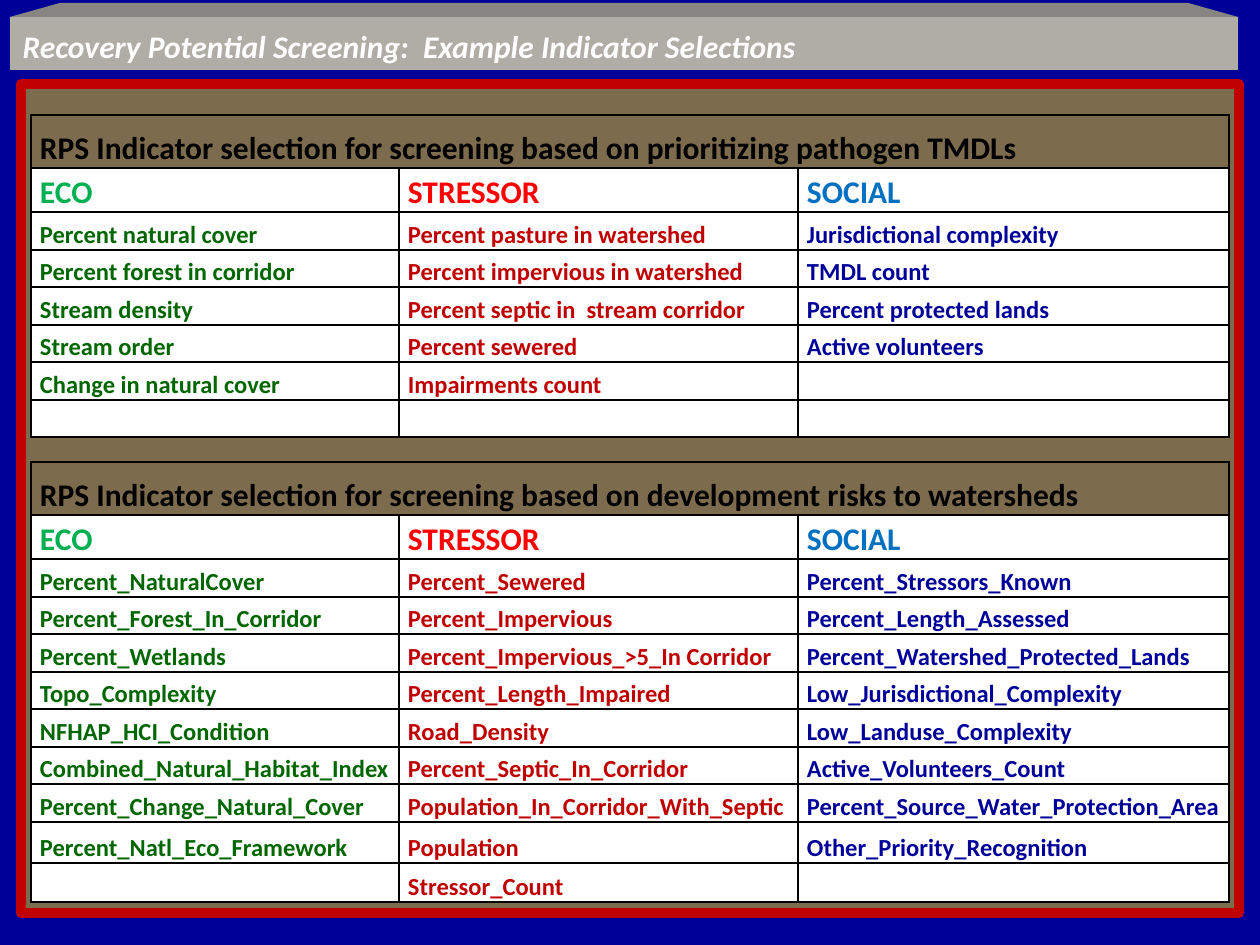
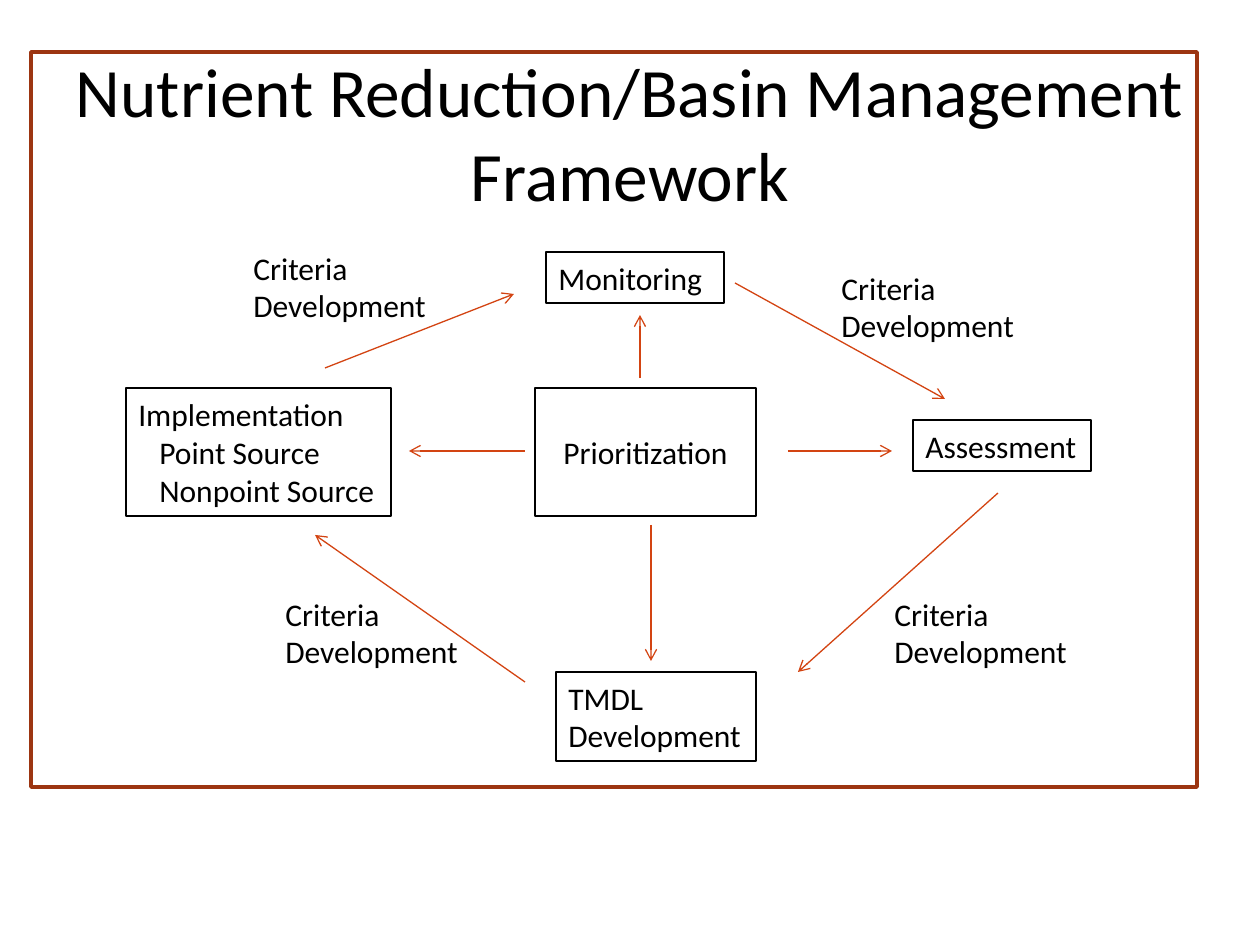
from dataclasses import dataclass
from itertools import zip_longest

from lxml.etree import SubElement
from pptx import Presentation
from pptx.dml.color import RGBColor
from pptx.enum.shapes import MSO_CONNECTOR, MSO_SHAPE
from pptx.enum.text import MSO_ANCHOR, MSO_AUTO_SIZE, PP_ALIGN
from pptx.oxml.ns import qn
from pptx.util import Emu, Pt

PX_PER_INCH = 126


@dataclass(frozen=True)
class Theme:
    font: str = "Calibri"
    black: str = "000000"
    white: str = "FFFFFF"
    navy: str = "000099"
    band_front: str = "B0ADA6"
    band_top: str = "888482"
    panel: str = "7C6B4D"
    red: str = "C00000"
    arrow: str = "D34412"
    frame: str = "9C3511"
    heads: tuple = ("00B050", "FF0000", "0070C0")
    columns: tuple = ("006600", "C00000", "000099")
    title_size: float = 39.6
    text_size: int = 18
    cell_size: int = 14


THEME = Theme()


def px(length):
    return Emu(round(length * 914400 / PX_PER_INCH))


def rgb(colour):
    return RGBColor.from_string(colour)


def write(frame, text, *, size=THEME.text_size, colour=THEME.black, bold=False,
          italic=False, align=PP_ALIGN.LEFT, spacing=None, rest_indent=0):
    """Write one paragraph a line; rest_indent moves in every line but the first."""
    for number, line in enumerate(text.split("\n")):
        para = frame.paragraphs[0] if number == 0 else frame.add_paragraph()
        para.alignment = align
        if spacing:
            para.line_spacing = spacing
        if number and rest_indent:
            para._p.get_or_add_pPr().set("marL", str(px(rest_indent)))
        if not line:
            SubElement(para._p, qn("a:endParaRPr")).set("sz", str(size * 100))
            continue
        span = para.add_run()
        span.text = line
        font = span.font
        font.name, font.size = THEME.font, Pt(size)
        font.bold, font.italic = bold, italic
        font.color.rgb = rgb(colour)


class Page:
    """Holds the theme and the current slide."""

    def __init__(self, deck, theme, background):
        self.theme = theme
        self.slide = deck.slides.add_slide(deck.slide_layouts[5])
        self.shapes = self.slide.shapes
        fill = self.slide.background.fill
        fill.solid()
        fill.fore_color.rgb = rgb(background)

    def paint(self, shape, fill=None, line=None, width=1):
        if fill:
            shape.fill.solid()
            shape.fill.fore_color.rgb = rgb(fill)
        else:
            shape.fill.background()
        if line:
            shape.line.color.rgb = rgb(line)
            shape.line.width = Pt(width)
        else:
            shape.line.fill.background()

    def title(self, text, place, *, fill=None, top_inset=6, **style):
        box = self.shapes.title
        box.left, box.top, box.width, box.height = map(px, place)
        self.paint(box, fill)
        frame = box.text_frame
        frame.auto_size = MSO_AUTO_SIZE.NONE
        frame.word_wrap = True
        frame.vertical_anchor = MSO_ANCHOR.MIDDLE
        frame.margin_top = px(top_inset)
        write(frame, text, **style)

    def rectangle(self, place, **look):
        shape = self.shapes.add_shape(MSO_SHAPE.RECTANGLE, *map(px, place))
        shape.shadow.inherit = False
        self.paint(shape, **look)
        return shape

    def outline(self, points, fill):
        start, *rest = [(px(x), px(y)) for x, y in points]
        builder = self.shapes.build_freeform(*start)
        builder.add_line_segments(rest)
        shape = builder.convert_to_shape()
        shape.shadow.inherit = False
        self.paint(shape, fill)

    def box(self, text, place, *, line=None, **style):
        shape = (self.rectangle(place, line=line) if line
                 else self.shapes.add_textbox(*map(px, place)))
        frame = shape.text_frame
        frame.word_wrap = False
        frame.vertical_anchor = MSO_ANCHOR.MIDDLE
        write(frame, text, **style)

    def arrow(self, start, end):
        connector = self.shapes.add_connector(
            MSO_CONNECTOR.STRAIGHT, *map(px, (*start, *end)))
        connector.line.color.rgb = rgb(self.theme.arrow)
        connector.line.width = Pt(0.75)
        properties = connector._element.spPr
        SubElement(properties.find(qn("a:ln")), qn("a:tailEnd")).set("type", "arrow")
        SubElement(properties, qn("a:effectLst"))

    def cell(self, cell, text, *, fill=None, **style):
        cell.margin_left = cell.margin_right = px(9)
        cell.margin_top = cell.margin_bottom = 0
        cell.vertical_anchor = MSO_ANCHOR.BOTTOM
        properties = cell._tc.get_or_add_tcPr()
        for side in ("lnL", "lnR", "lnT", "lnB"):
            border = SubElement(properties, qn(f"a:{side}"), w=str(Pt(1)))
            paint = SubElement(border, qn("a:solidFill"))
            SubElement(paint, qn("a:srgbClr"), val=self.theme.black)
        if fill:
            cell.fill.solid()
            cell.fill.fore_color.rgb = rgb(fill)
        else:
            cell.fill.background()
        write(cell.text_frame, text, bold=True, spacing=1.15, **style)

    def indicator_table(self, heading, indicators, top, body_heights):
        """Lay out a heading row, a row of column names and the indicator lists."""
        theme = self.theme
        widths, heights = (368, 399, 431), (53, 43, *body_heights)
        table = self.shapes.add_table(
            len(heights), len(widths), px(31), px(top),
            px(sum(widths)), px(sum(heights))).table
        for column, width in zip(table.columns, widths):
            column.width = px(width)
        for row, height in zip(table.rows, heights):
            row.height = px(height)
        table.cell(0, 0).merge(table.cell(0, len(widths) - 1))
        for column in range(len(widths)):
            self.cell(table.cell(0, column), "" if column else heading)
        for column, (name, entries) in enumerate(indicators.items()):
            self.cell(table.cell(1, column), name, fill=theme.white,
                      colour=theme.heads[column])
            for row, (entry, _) in enumerate(
                    zip_longest(entries, body_heights, fillvalue=""), start=2):
                self.cell(table.cell(row, column), entry, fill=theme.white,
                          size=theme.cell_size, colour=theme.columns[column])


PATHOGEN_INDICATORS = {
    "ECO": ["Percent natural cover", "Percent forest in corridor", "Stream density",
            "Stream order", "Change in natural cover"],
    "STRESSOR": ["Percent pasture in watershed", "Percent impervious in watershed",
                 "Percent septic in  stream corridor", "Percent sewered",
                 "Impairments count"],
    "SOCIAL": ["Jurisdictional complexity", "TMDL count", "Percent protected lands",
               "Active volunteers"],
}

DEVELOPMENT_INDICATORS = {
    "ECO": ["Percent_NaturalCover", "Percent_Forest_In_Corridor", "Percent_Wetlands",
            "Topo_Complexity", "NFHAP_HCI_Condition", "Combined_Natural_Habitat_Index",
            "Percent_Change_Natural_Cover", "Percent_Natl_Eco_Framework"],
    "STRESSOR": ["Percent_Sewered", "Percent_Impervious",
                 "Percent_Impervious_>5_In Corridor", "Percent_Length_Impaired",
                 "Road_Density", "Percent_Septic_In_Corridor",
                 "Population_In_Corridor_With_Septic", "Population", "Stressor_Count"],
    "SOCIAL": ["Percent_Stressors_Known", "Percent_Length_Assessed",
               "Percent_Watershed_Protected_Lands", "Low_Jurisdictional_Complexity",
               "Low_Landuse_Complexity", "Active_Volunteers_Count",
               "Percent_Source_Water_Protection_Area", "Other_Priority_Recognition"],
}


def indicator_page(deck):
    page = Page(deck, THEME, THEME.navy)
    page.outline([(10, 17), (60, 3), (1188, 3), (1238, 17)], THEME.band_top)
    page.title("Recovery Potential Screening:  Example Indicator Selections",
               (10, 17, 1228, 53), fill=THEME.band_front, top_inset=11,
               colour=THEME.white, bold=True, italic=True)
    page.rectangle((21, 84, 1218, 829), fill=THEME.panel, line=THEME.red, width=6)
    page.indicator_table(
        "RPS Indicator selection for screening based on development risks to watersheds",
        DEVELOPMENT_INDICATORS, 462, [38, 37] * 3 + [38, 41, 39])
    page.indicator_table(
        "RPS Indicator selection for screening based on prioritizing pathogen TMDLs",
        PATHOGEN_INDICATORS, 115, [38, 37] * 3)


def framework_page(deck):
    page = Page(deck, THEME, THEME.white)
    page.title("Nutrient Reduction/Basin Management Framework", (63, 53, 1134, 158),
               size=THEME.title_size, align=PP_ALIGN.CENTER)

    page.box("Prioritization", (535, 388, 221, 128), line=THEME.black,
             align=PP_ALIGN.CENTER)
    for text, place in (
            ("Monitoring", (546, 252, 178, 51)),
            ("Assessment", (913, 420, 178, 51)),
            ("TMDL\nDevelopment", (556, 672, 200, 89)),
            ("Implementation\nPoint Source\nNonpoint Source", (126, 388, 265, 128))):
        page.box(text, place, line=THEME.black,
                 rest_indent=21 if text.startswith("Implementation") else 0)

    for left, top in ((882, 588), (829, 262), (273, 588), (241, 242)):
        page.box("Criteria\nDevelopment", (left, top, 200, 89))

    for start, end in (
            ((788, 451), (892, 451)), ((640, 378), (640, 315)),
            ((525, 451), (409, 451)), ((651, 525), (651, 661)),
            ((998, 493), (798, 672)), ((525, 682), (315, 535)),
            ((325, 368), (514, 294)), ((735, 283), (945, 399))):
        page.arrow(start, end)

    page.rectangle((31, 52, 1166, 735), line=THEME.frame, width=2)


def main():
    deck = Presentation()
    deck.slide_width, deck.slide_height = px(1260), px(945)
    indicator_page(deck)
    framework_page(deck)
    deck.save("out.pptx")


if __name__ == "__main__":
    main()
